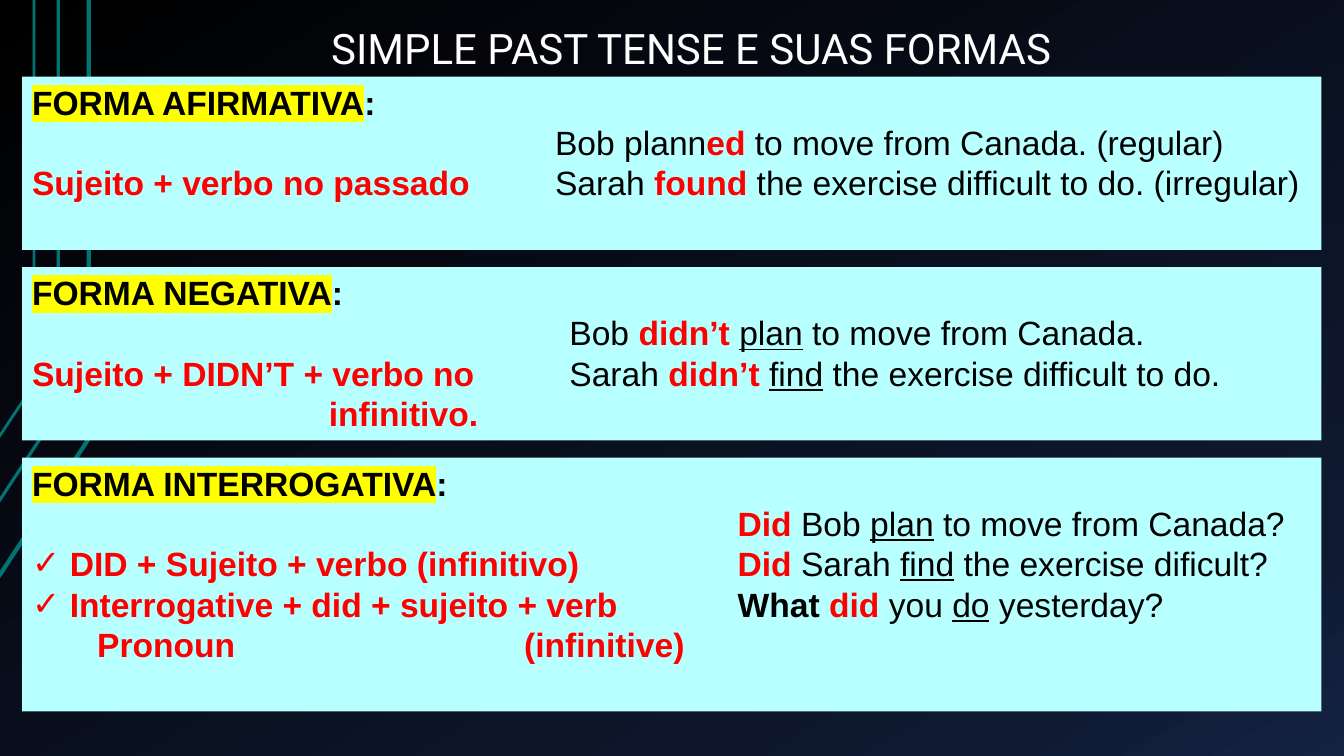
from lxml import etree
from copy import deepcopy
from pptx import Presentation
from pptx.dml.color import RGBColor
from pptx.enum.shapes import MSO_SHAPE
from pptx.enum.text import MSO_ANCHOR, PP_ALIGN
from pptx.oxml.ns import qn
from pptx.util import Cm, Pt

RECT = MSO_SHAPE.RECTANGLE
TOP = MSO_ANCHOR.TOP
LEFT, CENTER = PP_ALIGN.LEFT, PP_ALIGN.CENTER

BLACK = RGBColor(0, 0, 0)
WHITE = RGBColor(255, 255, 255)
RED = RGBColor(255, 0, 0)
YELLOW = RGBColor(255, 255, 0)
AQUA = RGBColor(0xB8, 0xFF, 0xFF)
TEAL = RGBColor(0, 0x73, 0x73)
NAVY = RGBColor(0x0F, 0x19, 0x31)
BLUE = RGBColor(0x14, 0x22, 0x42)

TITLE = "SIMPLE PAST TENSE E SUAS FORMAS"
STOPS = [(0, BLACK), (0.85, NAVY), (1, BLUE)]
RAYS = [
    (3, [(-0.03, 14.53), (2.24, 11.05), (2.24, 0)]),
    (2.25, [(-0.05, 12.67), (1.47, 10.36), (1.47, 0)]),
    (2, [(-0.03, 11.02), (0.86, 9.68), (0.86, 0)]),
]
PANELS = [
    {
        "head": "FORMA AFIRMATIVA", "high": 4.37, "side": 13.74,
        "rules": [("Sujeito + verbo no passado", False, [])],
        "cases": [
            [("Bob plann", "plain"), ("ed ", "red"),
             ("to move from Canada. (regular)", "plain")],
            [("Sarah ", "plain"), ("found ", "red"),
             ("the exercise difficult to do. (irregular)", "plain")],
        ],
    },
    {
        "head": "FORMA NEGATIVA", "high": 4.37, "side": 14.1,
        "rules": [("Sujeito + DIDN’T + verbo no", False, []),
                  ("\tinfinitivo.", False, [7.48])],
        "cases": [
            [("Bob ", "plain"), ("didn’t ", "red"), ("plan", "under"),
             (" to move from Canada.", "plain")],
            [("Sarah ", "plain"), ("didn’t ", "red"), ("find", "under"),
             (" the exercise difficult to do.", "plain")],
        ],
    },
    {
        "head": "FORMA INTERROGATIVA", "high": 6.4, "side": 18.34,
        "rules": [("DID + Sujeito + verbo (infinitivo)", True, []),
                  ("Interrogative + did + sujeito + verb", True, []),
                  ("\tPronoun\t(infinitive)", False, [1.64, 12.4])],
        "cases": [
            [("Did", "red"), (" Bob ", "plain"), ("plan", "under"),
             (" to move from Canada?", "plain")],
            [("Did ", "red"), ("Sarah ", "plain"), ("find", "under"),
             (" the exercise dificult?", "plain")],
            [("What ", "bold"), ("did ", "red"), ("you ", "plain"),
             ("do", "under"), (" yesterday?", "plain")],
        ],
    },
]
EDGE, WIDE, FIRST, STEP = 0.56, 32.74, 1.93, 4.8
LINE = Pt(28.8)


def add_run(para, text, style):
    """Add one styled run to a paragraph."""
    run = para.add_run()
    run.text = text
    font = run.font
    font.name, font.size = "Arial", Pt(24)
    font.bold = style in ("mark", "red", "bold")
    font.underline = style == "under"
    font.color.rgb = RED if style == "red" else BLACK
    if style == "mark":
        glow = etree.Element(qn("a:highlight"))
        etree.SubElement(glow, qn("a:srgbClr"), val=str(YELLOW))
        run._r.rPr.find(qn("a:solidFill")).addnext(glow)


def add_para(frame, runs, first=False, check=False, tabs=()):
    """Add a paragraph with its optional check bullet and tab stops."""
    para = frame.paragraphs[0] if first else frame.add_paragraph()
    props = para._p.get_or_add_pPr()
    if check:
        props.set("marL", str(Cm(0.95)))
        props.set("indent", str(-Cm(0.95)))
        etree.SubElement(props, qn("a:buFont"), typeface="Arial")
        etree.SubElement(props, qn("a:buChar"), char="✓")
    if tabs:
        stops = etree.SubElement(props, qn("a:tabLst"))
        for pos in tabs:
            etree.SubElement(stops, qn("a:tab"), pos=str(Cm(pos)), algn="l")
    para.alignment = LEFT
    para.line_spacing = LINE
    for text, style in runs:
        add_run(para, text, style)
    return para


def add_panel(slide, top, panel):
    """Draw one panel with its rule on the left and its cases on the right."""
    box = slide.shapes.add_shape(RECT, Cm(EDGE), Cm(top), Cm(WIDE), Cm(panel["high"]))
    box.shadow.inherit = False
    box.fill.solid()
    box.fill.fore_color.rgb = AQUA
    box.line.fill.background()
    frame = box.text_frame
    frame.word_wrap = True
    frame.vertical_anchor = TOP
    add_para(frame, [(panel["head"], "mark"), (":", "bold")], first=True)
    for i, (text, check, tabs) in enumerate(panel["rules"]):
        para = add_para(frame, [(text, "red")], check=check, tabs=tabs)
        if i == 0:
            para.space_before = LINE

    side, cases = panel["side"], panel["cases"]
    note = slide.shapes.add_textbox(
        Cm(side), Cm(top) + LINE, Cm(EDGE + WIDE - side), LINE * len(cases) + Cm(0.25))
    note.text_frame.word_wrap = True
    for i, runs in enumerate(cases):
        add_para(note.text_frame, runs, first=i == 0)


def add_back(slide):
    """Paint the gradient and the bent rays."""
    fill = slide.background.fill
    fill.gradient()
    fill.gradient_angle = 300
    last = slide.element.xpath(".//a:gs")[-1]
    last.addnext(deepcopy(last))
    for stop, (pos, color) in zip(fill.gradient_stops, STOPS):
        stop.position = pos
        stop.color.rgb = color
    for width, points in RAYS:
        start, *rest = [(Cm(x), Cm(y)) for x, y in points]
        path = slide.shapes.build_freeform(*start)
        path.add_line_segments(rest, close=False)
        ray = path.convert_to_shape()
        ray.shadow.inherit = False
        ray.fill.background()
        ray.line.color.rgb = TEAL
        ray.line.width = Pt(width)


def add_title(slide):
    """Place and format the title."""
    title = slide.shapes.title
    title.left, title.top = Cm(4.52), Cm(0.43)
    title.width, title.height = Cm(25.81), Cm(2.82)
    frame = title.text_frame
    frame.text = TITLE
    frame.vertical_anchor = TOP
    para = frame.paragraphs[0]
    para.alignment = CENTER
    font = para.runs[0].font
    font.name, font.size = "Roboto", Pt(30)
    font.color.rgb = WHITE


def main():
    """Build the slide and save it."""
    deck = Presentation()
    deck.slide_width, deck.slide_height = Cm(33.87), Cm(19.05)
    slide = deck.slides.add_slide(deck.slide_layouts[5])
    add_back(slide)
    add_title(slide)
    for i, panel in enumerate(PANELS):
        add_panel(slide, FIRST + i * STEP, panel)
    deck.save("out.pptx")


if __name__ == "__main__":
    main()
